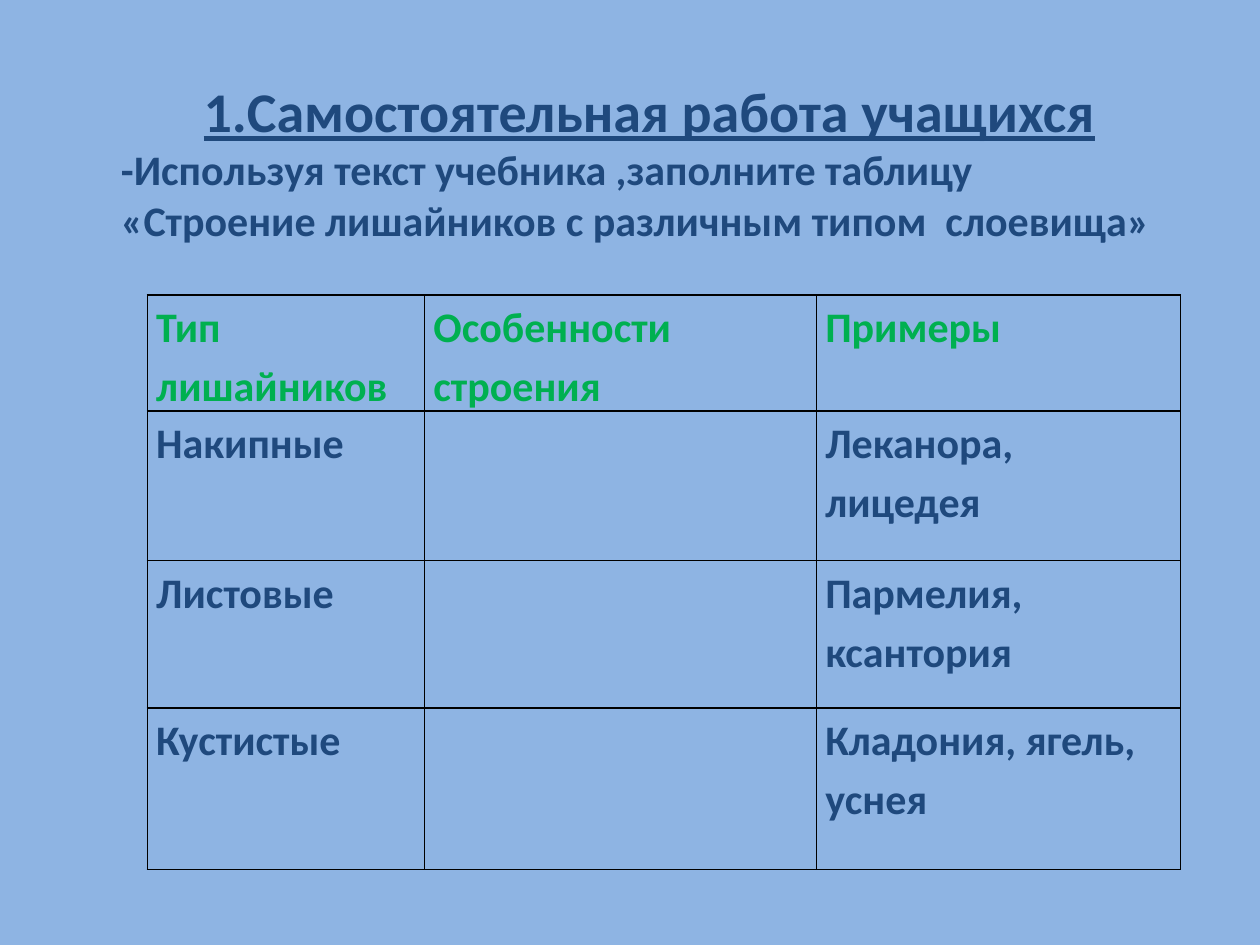
from typing import NamedTuple

from lxml import etree
from pptx import Presentation
from pptx.dml.color import RGBColor
from pptx.enum.text import MSO_ANCHOR, MSO_AUTO_SIZE, PP_ALIGN
from pptx.oxml.ns import qn
from pptx.util import Inches, Pt

LEFT, CENTER = PP_ALIGN.LEFT, PP_ALIGN.CENTER
MIDDLE = MSO_ANCHOR.MIDDLE
FIT_SHAPE = MSO_AUTO_SIZE.SHAPE_TO_FIT_TEXT

FONT = "Calibri"
SKY, NAVY, GREEN, BLACK = "8EB4E3", "1F497D", "00B050", "000000"
TITLE_ONLY = 5


class Line(NamedTuple):
    text: str
    size: int = 24
    align: PP_ALIGN = LEFT
    underline: bool = False


HEADING = [
    Line("1.Самостоятельная работа учащихся", 32, CENTER, True),
    Line("-Используя текст учебника ,заполните таблицу"),
    Line("«Строение лишайников с различным типом  слоевища»"),
]

LICHENS = [
    ("Тип лишайников", "Особенности строения", "Примеры"),
    ("Накипные", "", "Леканора, лицедея"),
    ("Листовые", "", "Пармелия, ксантория"),
    ("Кустистые", "", "Кладония, ягель, уснея"),
]
COL_WIDTHS = (2.2, 3.11, 2.89)
ROW_HEIGHTS = (0.89, 1.19, 1.17, 1.28)


def rgb(value: str) -> RGBColor:
    return RGBColor.from_string(value)


def write(p, text: str, *, size=24, color=NAVY, underline=False,
          align=LEFT, spacing=1.0) -> None:
    p.alignment = align
    p.line_spacing = spacing
    r = p.add_run()
    r.text = text
    font = r.font
    font.name, font.size, font.bold = FONT, Pt(size), True
    font.underline = underline
    font.color.rgb = rgb(color)


def add_borders(cell, color: str = BLACK, width: float = 1) -> None:
    tc_pr = cell._tc.get_or_add_tcPr()
    # Border elements come before the fill
    for i, side in enumerate(("lnL", "lnR", "lnT", "lnB")):
        ln = etree.Element(qn(f"a:{side}"), w=str(Pt(width)))
        fill = etree.SubElement(ln, qn("a:solidFill"))
        etree.SubElement(fill, qn("a:srgbClr"), val=color)
        tc_pr.insert(i, ln)


def add_heading(s, lines: list[Line]) -> None:
    title = s.shapes.title
    title.left, title.top = Inches(0.86), Inches(0.55)
    title.width, title.height = Inches(8.59), Inches(1.45)
    tf = title.text_frame
    tf.word_wrap, tf.auto_size, tf.vertical_anchor = True, FIT_SHAPE, MIDDLE
    for i, line in enumerate(lines):
        p = tf.add_paragraph() if i else tf.paragraphs[0]
        write(p, line.text, size=line.size, align=line.align,
              underline=line.underline)


def add_lichen_table(s, rows: list[tuple[str, ...]]) -> None:
    table = s.shapes.add_table(
        len(rows), len(COL_WIDTHS), Inches(1.17), Inches(2.34),
        Inches(sum(COL_WIDTHS)), Inches(sum(ROW_HEIGHTS))).table
    table.first_row = table.horz_banding = False
    for column, width in zip(table.columns, COL_WIDTHS):
        column.width = Inches(width)
    for row, height, texts in zip(table.rows, ROW_HEIGHTS, rows):
        row.height = Inches(height)
        color = GREEN if texts is rows[0] else NAVY
        for cell, text in zip(row.cells, texts):
            cell.fill.background()
            add_borders(cell)
            cell.margin_left = cell.margin_right = Inches(0.07)
            cell.margin_top = cell.margin_bottom = 0
            if text:
                write(cell.text_frame.paragraphs[0], text, color=color,
                      spacing=1.15)


def main() -> None:
    prs = Presentation()
    prs.slide_width, prs.slide_height = Inches(10), Inches(7.5)
    s = prs.slides.add_slide(prs.slide_layouts[TITLE_ONLY])

    # Background
    s.background.fill.solid()
    s.background.fill.fore_color.rgb = rgb(SKY)

    # Task and the table to fill in
    add_heading(s, HEADING)
    add_lichen_table(s, LICHENS)
    prs.save("out.pptx")


if __name__ == "__main__":
    main()
